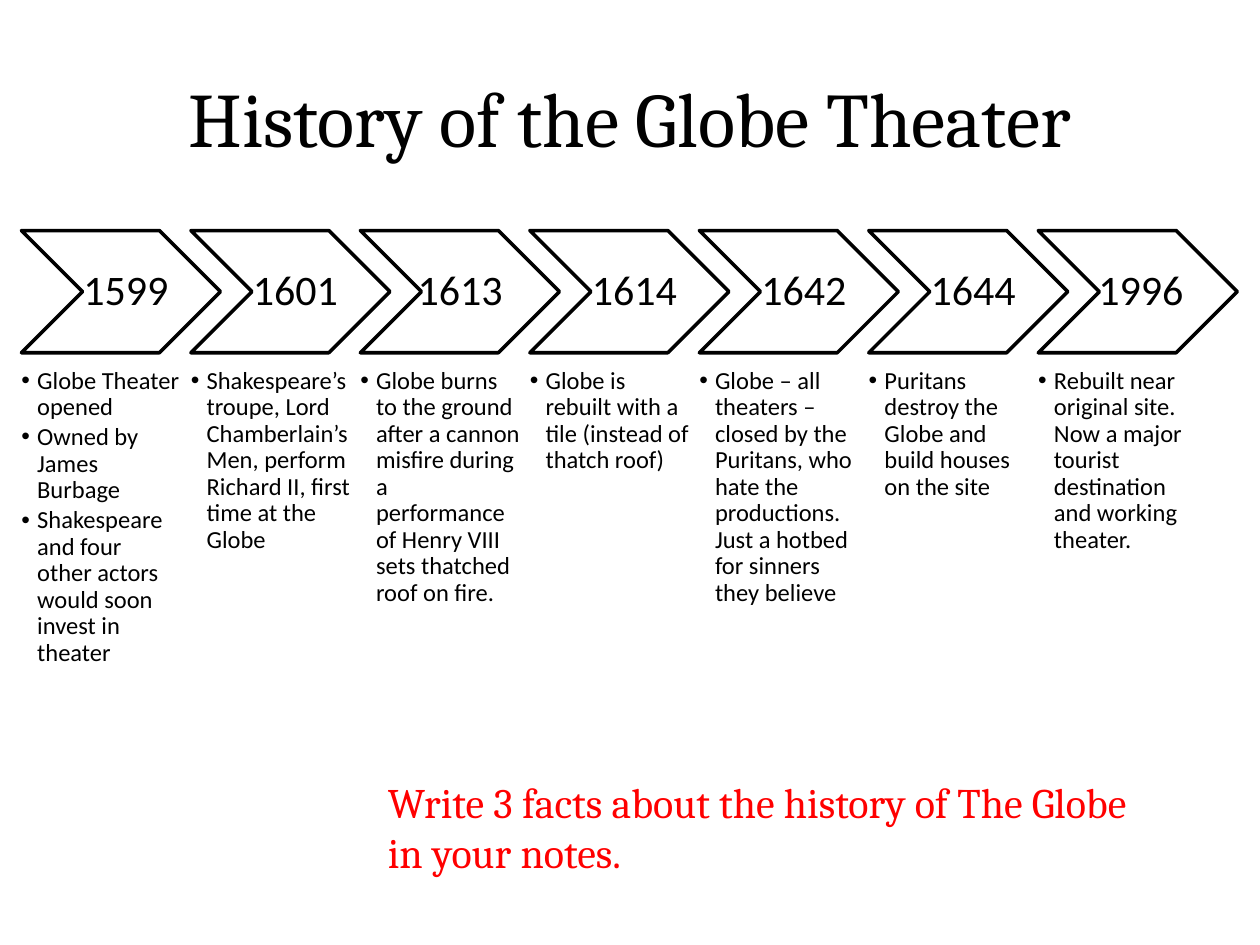
import lxml.etree
import pptx
import pptx.dml.color
import pptx.enum.shapes
import pptx.enum.text
import pptx.oxml.ns
import pptx.util
from pptx.util import Inches

COLORS = {"text": "000000", "arrow": "FFFFFF", "task": "FF0000"}

TIMELINE = [
    ("1599", ["Globe Theater opened",
              "Owned by James Burbage",
              "Shakespeare and four other actors would soon invest in theater"]),
    ("1601", ["Shakespeare’s troupe, Lord Chamberlain’s Men, perform Richard II, "
              "first time at the Globe"]),
    ("1613 ", ["Globe burns to the ground after a cannon misfire during a "
               "performance of Henry VIII sets thatched roof on fire."]),
    ("1614", ["Globe is rebuilt with a tile (instead of thatch roof)"]),
    ("1642", ["Globe – all theaters – closed by the Puritans, who hate the "
              "productions. Just a hotbed for sinners they believe"]),
    ("1644", ["Puritans destroy the Globe and build houses on the site"]),
    ("1996", ["Rebuilt near original site. Now a major tourist destination "
              "and working theater."]),
]
FIRST_LEFT, STEP = 0.17, 1.345
ARROW_TOP, ARROW_WIDTH, ARROW_HEIGHT = 1.83, 1.58, 0.97


def rgb(name):
    return pptx.dml.color.RGBColor.from_string(COLORS[name])


def style(paragraph, size, font_name, color="text"):
    paragraph.font.size = pptx.util.Pt(size)
    paragraph.font.name = font_name
    paragraph.font.color.rgb = rgb(color)


def set_insets(frame, left, top, right, bottom):
    frame.margin_left, frame.margin_top = Inches(left), Inches(top)
    frame.margin_right, frame.margin_bottom = Inches(right), Inches(bottom)


def add_text_frame(slide, left, top, width, height, insets):
    box = slide.shapes.add_textbox(
        Inches(left), Inches(top), Inches(width), Inches(height))
    frame = box.text_frame
    frame.word_wrap = True
    set_insets(frame, *insets)
    return frame


def add_bullet(paragraph):
    """Give the paragraph a hanging black bullet."""
    properties = paragraph._p.get_or_add_pPr()
    properties.set("marL", str(Inches(0.125)))
    properties.set("indent", str(Inches(-0.125)))
    qn = pptx.oxml.ns.qn
    bullet_color = lxml.etree.SubElement(properties, qn("a:buClr"))
    lxml.etree.SubElement(bullet_color, qn("a:srgbClr"), val=COLORS["text"])
    lxml.etree.SubElement(properties, qn("a:buFont"), typeface="Arial")
    lxml.etree.SubElement(properties, qn("a:buChar"), char="•")


def add_title(slide, text):
    title = slide.shapes.title
    title.left, title.top = Inches(0.5), Inches(0.3)
    title.width, title.height = Inches(9), Inches(1.25)
    frame = title.text_frame
    frame.text = text
    frame.vertical_anchor = pptx.enum.text.MSO_ANCHOR.MIDDLE
    set_insets(frame, 0.1, 0.05, 0.1, 0.05)
    frame.paragraphs[0].alignment = pptx.enum.text.PP_ALIGN.CENTER
    style(frame.paragraphs[0], 44, "Cambria")


def add_arrow(slide, left):
    arrow = slide.shapes.add_shape(
        pptx.enum.shapes.MSO_SHAPE.CHEVRON, Inches(left), Inches(ARROW_TOP),
        Inches(ARROW_WIDTH), Inches(ARROW_HEIGHT))
    arrow.adjustments[0] = 0.5
    arrow.shadow.inherit = False
    arrow.fill.solid()
    arrow.fill.fore_color.rgb = rgb("arrow")
    arrow.line.color.rgb = rgb("text")
    arrow.line.width = pptx.util.Pt(2)


def add_year(slide, left, year, insets):
    frame = add_text_frame(
        slide, left + 0.32, ARROW_TOP, 0.95, ARROW_HEIGHT, insets)
    frame.vertical_anchor = pptx.enum.text.MSO_ANCHOR.MIDDLE
    label = frame.paragraphs[0]
    label.text = year
    label.alignment = pptx.enum.text.PP_ALIGN.CENTER
    label.line_spacing = 0.9
    style(label, 24, "Calibri")


def add_events(slide, left, events):
    frame = add_text_frame(slide, left, 2.92, 1.27, 4.11, (0, 0, 0, 0))
    for index, event in enumerate(events):
        paragraph = frame.add_paragraph() if index else frame.paragraphs[0]
        paragraph.text = event
        paragraph.level = 1
        paragraph.line_spacing = 0.9
        paragraph.space_before = pptx.util.Pt(2.1 if index else 0)
        add_bullet(paragraph)
        style(paragraph, 14, "Calibri")


def add_task(slide, text):
    frame = add_text_frame(slide, 2.98, 6.06, 6.25, 0.89, (0.1,) * 4)
    frame.text = text
    style(frame.paragraphs[0], 24, "Cambria", "task")


def main():
    deck = pptx.Presentation()
    deck.slide_width, deck.slide_height = Inches(10), Inches(7.5)
    slide = deck.slides.add_slide(deck.slide_layouts[5])

    for index, (year, events) in enumerate(TIMELINE):
        left = FIRST_LEFT + index * STEP
        is_last = index == len(TIMELINE) - 1
        add_arrow(slide, left)
        add_year(slide, left, year,
                 (0.06, 0.02, 0.02, 0.02) if is_last else (0.1, 0.03, 0.03, 0.03))
        add_events(slide, left, events)

    add_title(slide, "History of the Globe Theater")
    add_task(slide, "Write 3 facts about the history of The Globe in your notes.")
    deck.save("out.pptx")


if __name__ == "__main__":
    main()
